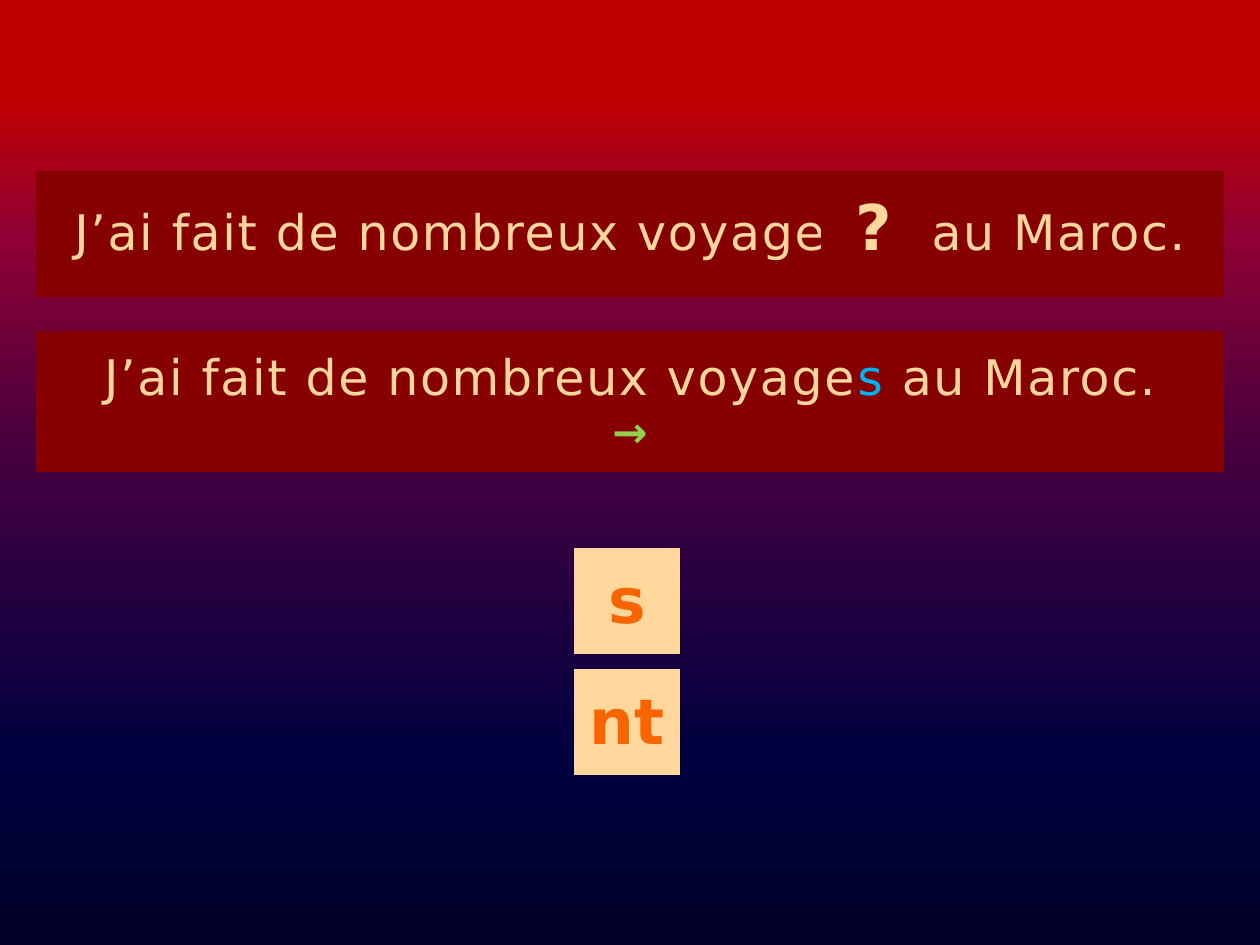
from lxml.etree import SubElement
from pptx import Presentation
from pptx.dml.color import RGBColor
from pptx.enum.shapes import MSO_SHAPE
from pptx.enum.text import MSO_ANCHOR, PP_ALIGN
from pptx.oxml.ns import qn
from pptx.util import Pt

PX = 914400 // 126
WIDTH, HEIGHT = 1260, 945
FONT = "DejaVu Sans"
DARK_RED, CREAM, ORANGE = "860000", "FFD79D", "F86400"
BLUE, GREEN = "00B0F0", "92D050"
SKY = [(0, "000026"), (20, "000040"), (50, "400040"), (75, "8F0134"), (90, "C00000")]

# Run: text, size, colour, bold, letter spacing in points
START = ("J’ai fait de nombreux voyage", 28, CREAM, False, 1)
END = ("au Maroc.", 28, CREAM, False, 1)
GAP = (" ", 28, CREAM, False, 50.5)  # one wide space, room for the "?"
QUESTION = [[START, GAP, END]]
ANSWER = [
    [START, ("s", 28, BLUE, False, 1), (" au Maroc.", 28, CREAM, False, 1)],
    [("→", 24, GREEN, True, 1)],
]
MARK = [[("?", 36, CREAM, True, 0)]]
CHOICES = ["s", "nt"]

BAR_X, BAR_W = 36, 1188
TILE = 106
CHOICE_X, CHOICE_Y, CHOICE_STEP = 574, 548, 121


def rgb(code):
    return RGBColor.from_string(code)


def add_block(slide, x, y, w, h):
    s = slide.shapes.add_shape(MSO_SHAPE.ACTION_BUTTON_CUSTOM,
                               *(v * PX for v in (x, y, w, h)))
    s.shadow.inherit = False
    s.line.fill.background()
    return s


def set_gradient(s, stops):
    """Fill from the bottom edge up, with any number of stops."""
    s.fill.gradient()
    s.fill.gradient_angle = 90
    stop_list = s.element.spPr.find(qn("a:gradFill")).find(qn("a:gsLst"))
    for old in list(stop_list):
        stop_list.remove(old)
    for percent, code in stops:
        stop = SubElement(stop_list, qn("a:gs"), pos=str(percent * 1000))
        SubElement(stop, qn("a:srgbClr"), val=code)


def add_text_block(slide, box, fill, paragraphs, top=5, bottom=10, space_after=0):
    s = add_block(slide, *box)
    s.fill.solid()
    s.fill.fore_color.rgb = rgb(fill)
    tf = s.text_frame
    tf.word_wrap = False
    tf.vertical_anchor = MSO_ANCHOR.MIDDLE
    tf.margin_top, tf.margin_bottom = top * PX, bottom * PX
    for i, runs in enumerate(paragraphs):
        p = tf.add_paragraph() if i else tf.paragraphs[0]
        p.alignment = PP_ALIGN.CENTER
        if i:
            p.space_after = Pt(space_after)
        for text, size, colour, bold, spacing in runs:
            r = p.add_run()
            r.text = text
            r.font.name = FONT
            r.font.size = Pt(size)
            r.font.bold = bold
            r.font.color.rgb = rgb(colour)
            if spacing:
                r.font._element.set("spc", str(int(spacing * 100)))


def main():
    prs = Presentation()
    prs.slide_width, prs.slide_height = WIDTH * PX, HEIGHT * PX
    slide = prs.slides.add_slide(prs.slide_layouts[6])

    set_gradient(add_block(slide, 0, 0, WIDTH, HEIGHT), SKY)
    add_text_block(slide, (BAR_X, 171, BAR_W, 126), DARK_RED, QUESTION, top=3)
    add_text_block(slide, (821, 175, TILE, TILE), DARK_RED, MARK)
    for i, ending in enumerate(CHOICES):
        box = (CHOICE_X, CHOICE_Y + i * CHOICE_STEP, TILE, TILE)
        add_text_block(slide, box, CREAM, [[(ending, 36, ORANGE, True, 0)]])
    add_text_block(slide, (BAR_X, 331, BAR_W, 141), DARK_RED, ANSWER,
                   bottom=5, space_after=6)
    prs.save("out.pptx")


if __name__ == "__main__":
    main()
